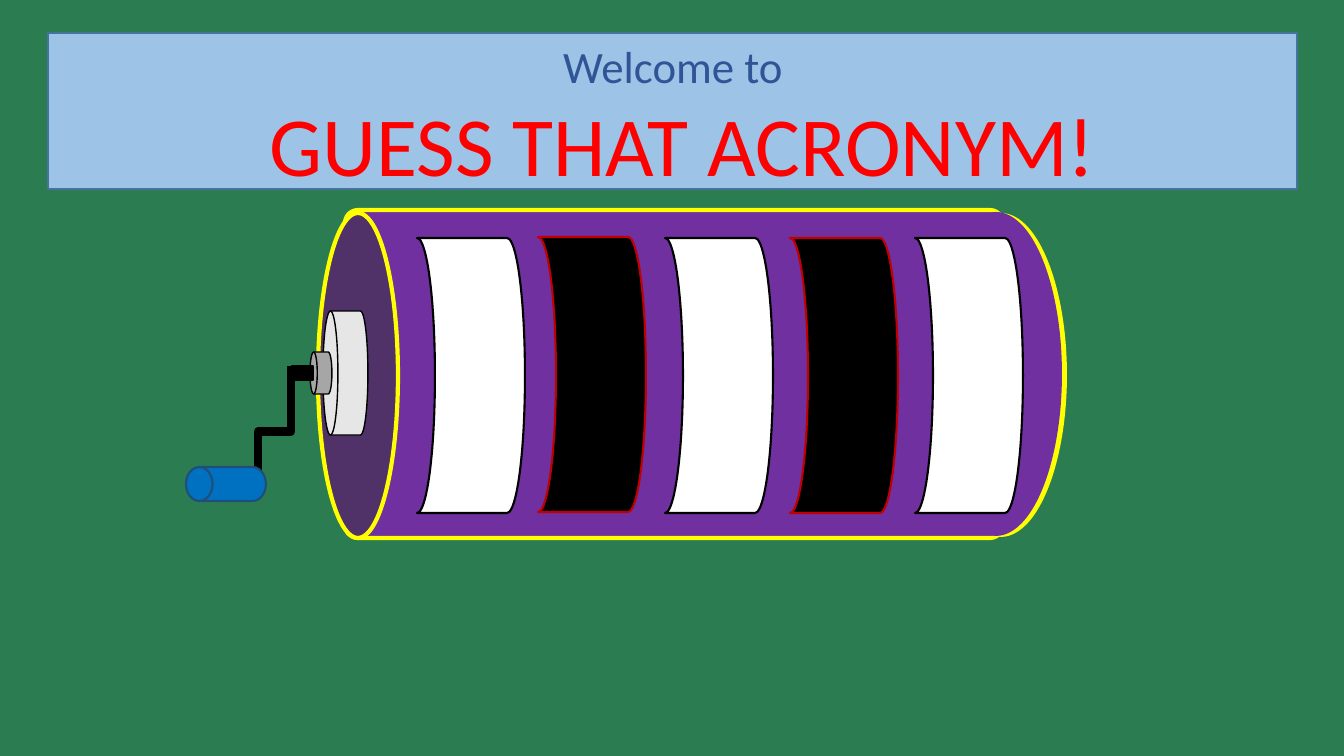
from lxml import etree
from pptx import Presentation
from pptx import util as u
from pptx.dml.color import RGBColor
from pptx.enum import shapes, text
from pptx.oxml.ns import qn

PX = 12192000 / 1344
KIND = shapes.MSO_SHAPE
COLORS = {
    "green": "2C7C52", "yellow": "FFFF00", "purple": "7030A0", "plum": "503268",
    "black": "000000", "white": "FFFFFF", "light": "E7E6E6", "gray": "A6A6A6",
    "dark_red": "C00000", "red": "FF0000", "blue": "0070C0", "deep_blue": "1F4E79",
    "sky": "9DC3E6", "steel": "43739E", "heading": "2F5597", "navy": "002060",
}


def px(*lengths):
    return [u.Emu(round(n * PX)) for n in lengths]


def add_part(parent, kind, box, fill, line=None, width=1, flip=False):
    sp = parent.shapes.add_shape(kind, *px(*box))
    sp.shadow.inherit = False
    sp.fill.solid()
    sp.fill.fore_color.rgb = RGBColor.from_string(COLORS[fill])
    if line:
        sp.line.color.rgb = RGBColor.from_string(COLORS[line])
        sp.line.width = u.Pt(width)
    else:
        sp.line.fill.background()
    if flip:
        sp.element.spPr.find(qn("a:xfrm")).set("flipH", "1")
    return sp


prs = Presentation()
prs.slide_width, prs.slide_height = px(1344, 756)
s = prs.slides.add_slide(prs.slide_layouts[6])
s.background.fill.solid()
s.background.fill.fore_color.rgb = RGBColor.from_string(COLORS["green"])

# Barrel, hub and axle
add_part(s, KIND.OVAL, (935, 213, 132, 324), "yellow")
barrel = add_part(s, KIND.ROUNDED_RECTANGLE, (345, 210, 658, 328), "purple", "yellow", 3)
barrel.adjustments[0] = 0.04
add_part(s, KIND.OVAL, (318, 213, 80, 325), "plum", "yellow", 3)
drum = KIND.FLOWCHART_DIRECT_ACCESS_STORAGE
add_part(s, drum, (323, 311, 45, 124), "light", "black", flip=True)
add_part(s, KIND.OVAL, (930, 212, 132, 324), "purple")
add_part(s, drum, (310, 352, 22, 42), "gray", "black", flip=True)
add_part(s, KIND.RECTANGLE, (292, 366, 21, 14), "black", "black")

# Alternating panels
for i, left in enumerate((417, 538, 665, 790, 915)):
    fill, line = (("white", "black"), ("black", "dark_red"))[i % 2]
    top = 237 if i == 1 else 238
    add_part(s, KIND.FLOWCHART_STORED_DATA, (left, top, 108, 275), fill, line, 1.5, True)

# Crank arm, turned a quarter so that it starts downwards
arm = s.shapes.add_connector(shapes.MSO_CONNECTOR.ELBOW, *px(209, 415, 340, 448))
arm.line.color.rgb = RGBColor.from_string(COLORS["black"])
arm.line.width = u.Pt(6)
arm.element.spPr.find(qn("a:xfrm")).set("rot", "5400000")
etree.SubElement(arm.element.spPr, qn("a:effectLst"))

# Crank handle
add_part(s, drum, (186, 467, 80, 34), "blue", "deep_blue", 1.5, True)

# Title banner
banner = s.shapes.add_group_shape()
add_part(banner, KIND.RECTANGLE, (48, 33, 1249, 156), "sky", "steel")
title = banner.shapes.add_textbox(*px(235, 34, 876, 166))
tf = title.text_frame
tf.word_wrap = True
tf.auto_size = text.MSO_AUTO_SIZE.SHAPE_TO_FIT_TEXT
lines = [
    [("Welcome to", 32, "heading")],
    [(" ", 60, "white"), ("GUESS THAT ACRONYM!", 60, "red")],
]
for i, runs in enumerate(lines):
    p = tf.add_paragraph() if i else tf.paragraphs[0]
    p.alignment = text.PP_ALIGN.CENTER
    for words, size, color in runs:
        r = p.add_run()
        r.text = words
        r.font.name = "Calibri"
        r.font.size = u.Pt(size)
        r.font.color.rgb = RGBColor.from_string(COLORS[color])
        # Letter outline
        outline = etree.Element(qn("a:ln"), w=str(u.Pt(1.75)))
        solid = etree.SubElement(outline, qn("a:solidFill"))
        etree.SubElement(solid, qn("a:srgbClr"), val=COLORS["navy"])
        r.font._element.insert(0, outline)

prs.save("out.pptx")
